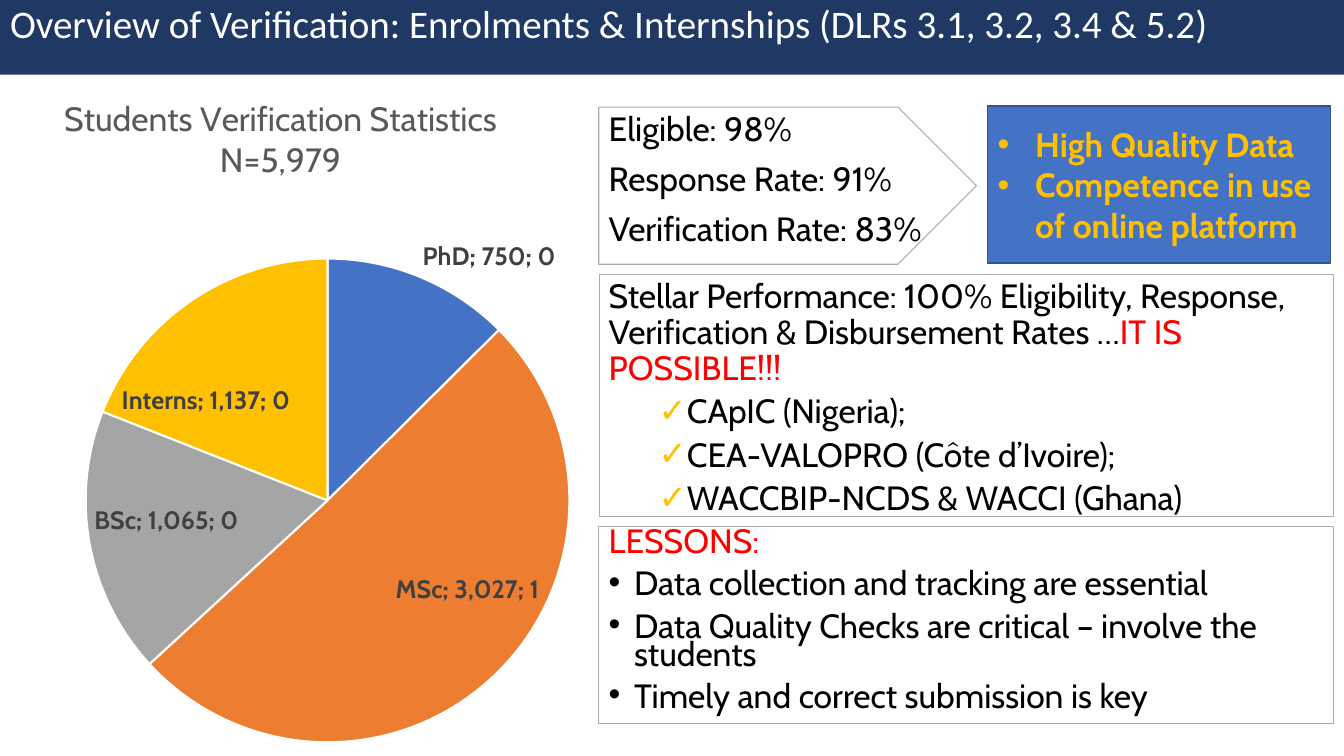
from pptx import Presentation
from pptx.chart.data import CategoryChartData
from pptx.dml.color import RGBColor
from pptx.enum.chart import XL_CHART_TYPE as Chart, XL_LABEL_POSITION as Pos
from pptx.enum.shapes import MSO_SHAPE as Shape
from pptx.enum.text import MSO_ANCHOR as Anchor, MSO_AUTO_SIZE as Auto, PP_ALIGN as Align
from pptx.oxml import parse_xml
from pptx.oxml.ns import nsdecls, qn
from pptx.util import Cm, Pt
from lxml.etree import SubElement

NAVY, BLUE, GOLD, RED = "203864", "4472C4", "FFC000", "FF0000"
BLACK, WHITE, GREY, EDGE = "000000", "FFFFFF", "404040", "AFABAB"


def rgb(value):
    return RGBColor.from_string(value)


class Deck:
    """Holds the text style and the current slide."""
    font, size = "Cabin", 24

    def __init__(self, prs):
        self.s = prs.slides.add_slide(prs.slide_layouts[5])

    def style(self, font, color, size=None, bold=False, name=None):
        font.name, font.size, font.bold = name or self.font, Pt(size or self.size), bold
        font.color.rgb = rgb(color)

    def title(self, text, box, size):
        sp = self.s.shapes.title
        sp.left, sp.top, sp.width, sp.height = (Cm(v) for v in box)
        sp.fill.solid()
        sp.fill.fore_color.rgb = rgb(NAVY)
        tf = sp.text_frame
        tf.text, tf.vertical_anchor, tf.auto_size = text, Anchor.TOP, Auto.NONE
        p = tf.paragraphs[0]
        p.alignment, p.line_spacing = Align.LEFT, 0.9
        self.style(p.font, WHITE, size, name="Calibri")

    def panel(self, box, kind=Shape.RECTANGLE, fill=None, edge=EDGE, weight=0.75,
              anchor=Anchor.TOP):
        sp = self.s.shapes.add_shape(kind, *(Cm(v) for v in box))
        sp.shadow.inherit = False
        if fill:
            sp.fill.solid()
            sp.fill.fore_color.rgb = rgb(fill)
        else:
            sp.fill.background()
        sp.line.color.rgb, sp.line.width = rgb(edge), Pt(weight)
        tf = sp.text_frame
        tf.word_wrap, tf.vertical_anchor = True, anchor
        return tf

    def para(self, tf, text, color=BLACK, spacing=0.9, before=10, bold=False):
        p = tf.paragraphs[0]
        if p.runs:
            p = tf.add_paragraph()
        p.add_run().text = text
        p.alignment, p.line_spacing, p.space_before = Align.LEFT, spacing, Pt(before)
        self.style(p.font, color, bold=bold)
        return p

    def bullet(self, p, char, margin, hang, color=None):
        pPr = p._p.get_or_add_pPr()
        pPr.set("marL", str(Cm(margin)))
        pPr.set("indent", str(-Cm(hang)))
        marks = []
        if color:
            marks.append(f'<a:buClr {nsdecls("a")}><a:srgbClr val="{color}"/></a:buClr>')
        marks.append(f'<a:buFont {nsdecls("a")} typeface="Arial"/>')
        marks.append(f'<a:buChar {nsdecls("a")} char="{char}"/>')
        default = pPr.find(qn("a:defRPr"))
        for mark in marks:
            default.addprevious(parse_xml(mark))

    def pie(self, box, title, values, colors, plot_area):
        data = CategoryChartData(number_format="#,##0")
        data.categories = list(values)
        data.add_series("Series 1", list(values.values()))
        chart = self.s.shapes.add_chart(Chart.PIE, *(Cm(v) for v in box), data).chart
        chart.has_legend = False
        self.style(chart.font, BLACK, 10, name="Calibri")
        chart.has_title = True
        tf = chart.chart_title.text_frame
        tf.text = title
        for p in tf.paragraphs:
            self.style(p.font, "595959")
        plot = chart.plots[0]
        plot.vary_by_categories = True
        for i, color in enumerate(colors):
            form = plot.series[0].points[i].format
            form.fill.solid()
            form.fill.fore_color.rgb = rgb(color)
            form.line.color.rgb, form.line.width = rgb(WHITE), Pt(1.5)
        labels = plot.series[0].data_labels
        labels.show_category_name = labels.show_value = labels.show_percentage = True
        labels.number_format, labels.number_format_is_linked = "#,##0", False
        labels.position = Pos.BEST_FIT
        self.style(labels.font, GREY, 18, bold=True)
        # Fixed place of the pie within the chart
        area = chart._chartSpace.chart.plotArea
        for old in area.findall(qn("c:layout")):
            area.remove(old)
        layout = parse_xml(f'<c:layout {nsdecls("c")}/>')
        manual = SubElement(layout, qn("c:manualLayout"))
        settings = dict(layoutTarget="inner", xMode="edge", yMode="edge", **plot_area)
        for tag, value in settings.items():
            SubElement(manual, qn(f"c:{tag}")).set("val", str(value))
        area.insert(0, layout)


def main():
    prs = Presentation()
    prs.slide_width, prs.slide_height = Cm(33.87), Cm(19.05)
    deck = Deck(prs)
    left, width = 15.09, 18.52

    # Title bar
    deck.title("Overview of Verification: Enrolments & Internships (DLRs 3.1, 3.2, 3.4 & 5.2)",
               (0, 0, 33.87, 1.88), 27.9)

    # Students by level
    deck.pie((-1.4, 1.88, 16.94, 17.17), "Students Verification Statistics\nN=5,979",
             {"PhD": 750, "MSc": 3027, "BSc": 1065, "Interns": 1137},
             (BLUE, "ED7D31", "A5A5A5", GOLD), dict(x=0.21, y=0.27, w=0.72, h=0.71))

    # Rates and what they show
    tf = deck.panel((left, 2.7, 9.52, 3.96), Shape.PENTAGON)
    for text in ("Eligible: 98%", "Response Rate: 91%", "Verification Rate: 83%"):
        deck.para(tf, text)
    tf = deck.panel((24.89, 2.67, 8.64, 3.96), fill=BLUE, edge="325491", weight=1,
                    anchor=Anchor.MIDDLE)
    for text in ("High Quality Data", "Competence in use of online platform"):
        deck.bullet(deck.para(tf, text, GOLD, 1.0, 0, True), "•", 0.95, 0.95)

    # Best performers
    tf = deck.panel((left, 6.91, width, 6.1), weight=0.25)
    p = deck.para(tf, "Stellar Performance: 100% Eligibility, Response, "
                      "Verification & Disbursement Rates …")
    r = p.add_run()
    r.text = "IT IS POSSIBLE!!!"
    r.font.color.rgb = rgb(RED)
    for text in ("CApIC (Nigeria);", "CEA-VALOPRO (Côte d’Ivoire);",
                 "WACCBIP-NCDS & WACCI (Ghana)"):
        p = deck.para(tf, text, before=5)
        p.level = 1
        deck.bullet(p, "✓", 1.9, 0.64, GOLD)

    # Lessons
    tf = deck.panel((left, 13.26, width, 4.98))
    deck.para(tf, "LESSONS:", RED, 0.7)
    for text in ("Data collection and tracking are essential",
                 "Data Quality Checks are critical – involve the students",
                 "Timely and correct submission is key"):
        deck.bullet(deck.para(tf, text, spacing=0.7), "•", 0.64, 0.64)

    prs.save("out.pptx")


if __name__ == "__main__":
    main()
